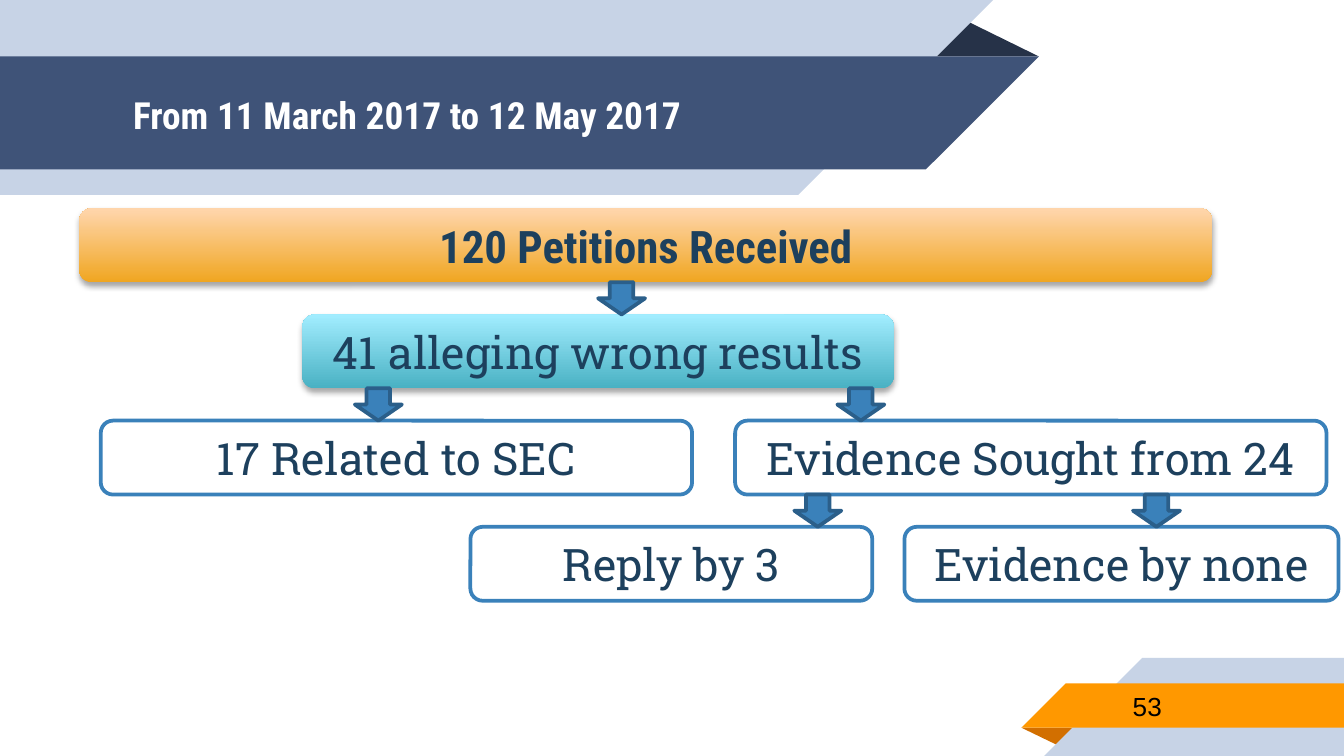
from lxml import etree
from pptx import Presentation
from pptx.dml.color import RGBColor
from pptx.enum.shapes import MSO_SHAPE
from pptx.enum.text import MSO_ANCHOR, PP_ALIGN
from pptx.oxml.ns import qn
from pptx.util import Inches, Pt

ROUNDED = MSO_SHAPE.ROUNDED_RECTANGLE
DOWN_ARROW = MSO_SHAPE.DOWN_ARROW
MIDDLE = MSO_ANCHOR.MIDDLE
LEFT, CENTER = PP_ALIGN.LEFT, PP_ALIGN.CENTER

SLIDE_W = 10
SLIDE_H = SLIDE_W * 9 / 16
HEADING_FONT, BODY_FONT = "Roboto Condensed", "Roboto Slab"
PALE, NAVY, INK, BLUE = "C7D3E6", "3F5378", "1D405D", "3A81BA"
BOX_H, ARROW_W, ARROW_H = 0.55, 0.35, 0.24

LEVELS = [
    [("120 Petitions Received", 0.59, 8.43, ("F0A621", "FFD6AD"))],
    [("41 alleging wrong results", 2.25, 4.4, ("49B1C3", "A2EDFF"))],
    [("17 Related to SEC", 0.75, 4.4, None),
     ("Evidence Sought from 24", 5.47, 4.4, None)],
    [("Reply by 3", 3.5, 2.99, None), ("Evidence by none", 6.73, 3.23, None)],
]
ARROWS = [[4.45], [2.64, 6.23], [5.91, 8.43]]


def rgb(hex_code):
    """Return the colour for a hex string."""
    return RGBColor.from_string(hex_code)


def place(item, left, top, width, height):
    """Move and size an item, in inches."""
    item.left, item.top = Inches(left), Inches(top)
    item.width, item.height = Inches(width), Inches(height)


def write(item, text, font, size, color, bold=False, align=LEFT, inset=0.1):
    """Fill an item with one formatted, vertically centred line."""
    frame = item.text_frame
    frame.text = text
    frame.word_wrap = True
    frame.vertical_anchor = MIDDLE
    frame.margin_left = frame.margin_right = Inches(inset)
    frame.margin_top = frame.margin_bottom = Inches(inset)
    paragraph = frame.paragraphs[0]
    paragraph.alignment = align
    run_font = paragraph.runs[0].font
    run_font.name, run_font.size, run_font.bold = font, Pt(size), bold
    run_font.color.rgb = rgb(color)


def paint(shape, fill, line=None):
    """Give a shape a flat fill, an optional outline and no shadow."""
    shape.shadow.inherit = False
    shape.fill.solid()
    shape.fill.fore_color.rgb = rgb(fill)
    if line:
        shape.line.color.rgb = rgb(line)
        shape.line.width = Pt(2)
    else:
        shape.line.fill.background()


def add_polygon(slide, left, top, points, color):
    """Draw a filled polygon from points relative to a corner."""
    corners = [(Inches(left + x), Inches(top + y)) for x, y in points]
    builder = slide.shapes.build_freeform(*corners[0])
    builder.add_line_segments(corners[1:], close=True)
    paint(builder.convert_to_shape(), color)


def add_banner(slide, left, top, width, height):
    """Place the folded ribbon and the title on it."""
    fold, ribbon_top, ribbon_h = 0.14, 0.42, 0.84
    ribbon_w = width - ribbon_h
    pale_w = 7.39
    add_polygon(slide, left, top, [
        (width - 0.85, ribbon_top), (width - 0.57, fold), (width, ribbon_top)],
        "263248")
    add_polygon(slide, left, top, [
        (0, 0), (pale_w, 0), (pale_w - height, height), (0, height)], PALE)
    add_polygon(slide, left, top + ribbon_top, [
        (0, 0), (width, 0), (ribbon_w, ribbon_h), (0, ribbon_h)], NAVY)
    title = slide.shapes.title
    slide.shapes.element.append(title.element)
    place(title, left + 0.89, top + ribbon_top + 0.01, 5.75, ribbon_h)
    write(title, "From 11 March 2017 to 12 May 2017", HEADING_FONT, 20,
          "FFFFFF", bold=True)


def add_page_tab(slide, left, top, width, height):
    """Place the folded tab in the corner and the page number on it."""
    tab_top, tab_h = 0.19, 0.33
    tab_bottom = tab_top + tab_h
    pale_left = 0.17
    add_polygon(slide, left, top, [
        (0, tab_bottom), (0.43, tab_bottom), (0.29, tab_bottom + 0.14)],
        "D26F00")
    add_polygon(slide, left, top, [
        (pale_left + height, 0), (width, 0), (width, height),
        (pale_left, height)], PALE)
    add_polygon(slide, left, top + tab_top, [
        (tab_h, 0), (width, 0), (width, tab_h), (0, tab_h)], "FF9800")
    number = slide.shapes.add_textbox(0, 0, 0, 0)
    place(number, left + 0.73, top + tab_top - 0.01, 1.63, 0.35)
    write(number, "53", "Arial", 14, "000000")


def add_gradient(shape, bottom, top):
    """Fade a shape upwards between two colours and add a soft shadow."""
    shape.fill.gradient()
    shape.fill.gradient_angle = 90
    for stop, color, position in zip(shape.fill.gradient_stops,
                                     (bottom, top), (0, 1)):
        stop.color.rgb = rgb(color)
        stop.position = position
    effects = shape.element.spPr.find(qn("a:effectLst"))
    shadow = etree.SubElement(
        effects, qn("a:outerShdw"), blurRad=str(Pt(3.1)), dist=str(Pt(1.8)),
        dir="5400000", rotWithShape="0")
    black = etree.SubElement(shadow, qn("a:srgbClr"), val="000000")
    etree.SubElement(black, qn("a:alpha"), val="35000")


def add_step(slide, text, left, top, width, gradient):
    """Place one box of the flow, shaded if it has gradient colours."""
    step = slide.shapes.add_shape(ROUNDED, 0, 0, 0, 0)
    place(step, left, top, width, BOX_H)
    paint(step, "FFFFFF", None if gradient else BLUE)
    if gradient:
        add_gradient(step, *gradient)
    heading = text == LEVELS[0][0][0]
    write(step, text, HEADING_FONT if heading else BODY_FONT, 24, INK,
          bold=heading, align=CENTER, inset=0.05)


def add_flow(slide, left, top):
    """Place the levels of boxes and then the arrows between them."""
    pitch = BOX_H + ARROW_H
    for level, steps in enumerate(LEVELS):
        for text, x, width, gradient in steps:
            add_step(slide, text, left + x, top + level * pitch, width, gradient)
    for level, positions in enumerate(ARROWS):
        for x in positions:
            arrow = slide.shapes.add_shape(DOWN_ARROW, 0, 0, 0, 0)
            place(arrow, left + x, top + level * pitch + BOX_H,
                  ARROW_W, ARROW_H)
            paint(arrow, BLUE, "2B5F8A")


def main():
    """Build and save the slide."""
    presentation = Presentation()
    presentation.slide_width = Inches(SLIDE_W)
    presentation.slide_height = Inches(SLIDE_H)
    slide = presentation.slides.add_slide(presentation.slide_layouts[5])
    add_banner(slide, 0, 0, 7.73, 1.45)
    add_page_tab(slide, 7.6, SLIDE_H - 0.73, 2.4, 0.73)
    add_flow(slide, 0, 1.55)
    presentation.save("out.pptx")


if __name__ == "__main__":
    main()
